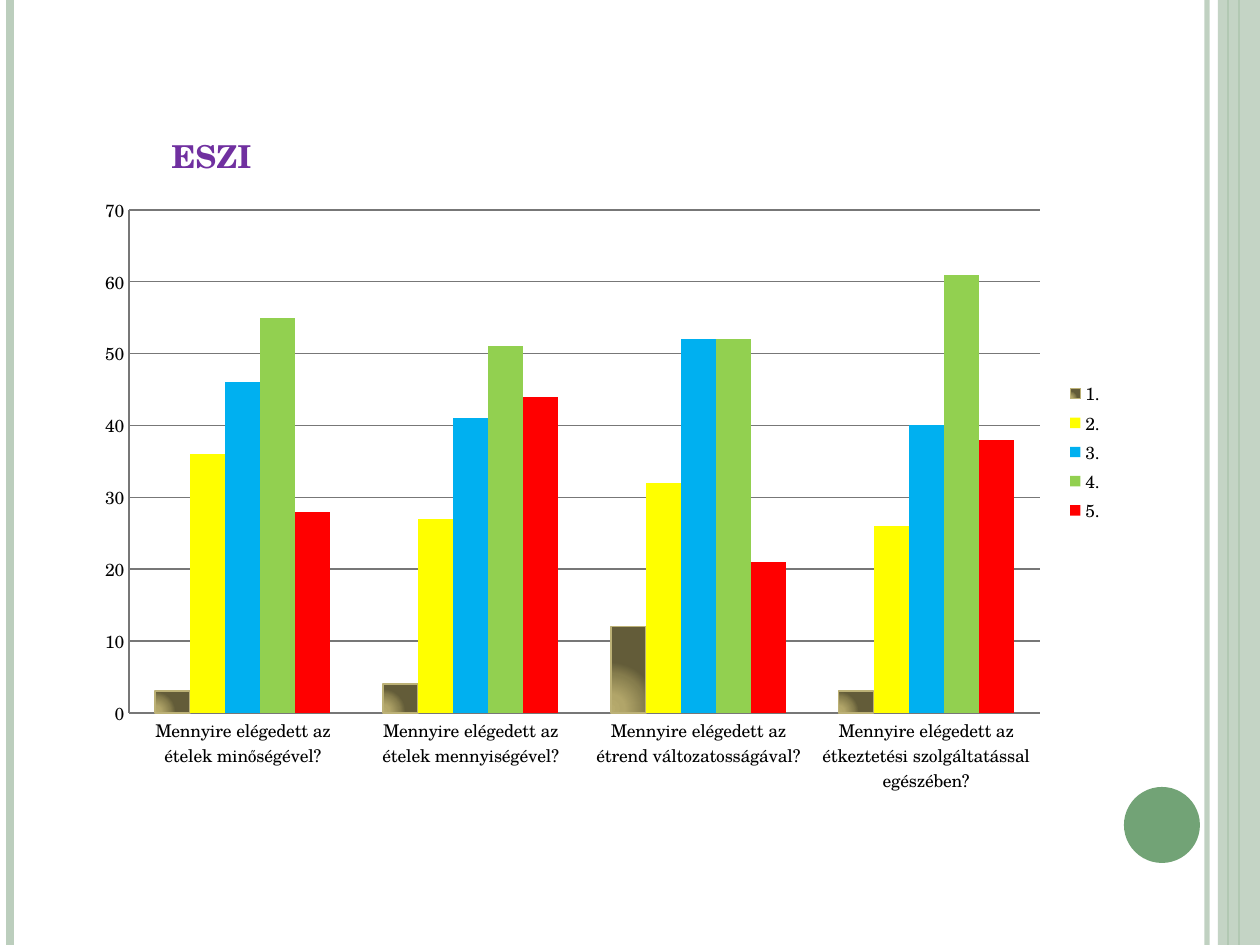
from lxml.etree import SubElement
from pptx import Presentation
from pptx.chart.data import CategoryChartData
from pptx.dml.color import RGBColor
from pptx.enum.chart import XL_CHART_TYPE, XL_LEGEND_POSITION, XL_TICK_MARK
from pptx.enum.shapes import MSO_CONNECTOR, MSO_SHAPE
from pptx.oxml import parse_xml
from pptx.oxml.ns import nsdecls, qn
from pptx.util import Pt

PX = 914400 // 126
W, H = 1260, 945
FONT = "TeX Gyre Schola"


def paint(fill, color, alpha=100):
    """Fill with a hex colour; alpha is the opacity in percent."""
    fill.solid()
    fill.fore_color.rgb = RGBColor.from_string(color)
    if alpha < 100:
        for clr in fill._xPr.iter(qn("a:srgbClr")):
            SubElement(clr, qn("a:alpha"), val=str(alpha * 1000))


def write(tf, text, size=10, color="000000", bold=False):
    r = tf.paragraphs[0].add_run()
    r.text = text
    r.font.name = FONT
    r.font.size = Pt(size)
    r.font.bold = bold
    paint(r.font.fill, color)


prs = Presentation()
prs.slide_width, prs.slide_height = 9144000, 6858000
s = prs.slides.add_slide(prs.slide_layouts[6])

# Side stripes, band and circle: x, width in points, colour, opacity
for x, width, color, alpha in [
    (1207, 3, "BCCEBD", 93),
    (10, 4.5, "BCCEBD", 100),
    (1239, 1.5, "72A376", 100),
    (1228, 0.75, "72A376", 100),
]:
    line = s.shapes.add_connector(MSO_CONNECTOR.STRAIGHT, x * PX, 0, x * PX, H * PX)
    line.line.width = Pt(width)
    paint(line.line.fill, color, alpha)
    SubElement(line._element.spPr, qn("a:effectLst"))

for kind, x, y, w, h, color, alpha in [
    (MSO_SHAPE.RECTANGLE, 1218, 0, 42, H, "BCCEBD", 87),
    (MSO_SHAPE.OVAL, 1124, 787, 76, 76, "72A376", 100),
]:
    sp = s.shapes.add_shape(kind, x * PX, y * PX, w * PX, h * PX)
    sp.shadow.inherit = False
    sp.line.fill.background()
    paint(sp.fill, color, alpha)

# Satisfaction chart
data = CategoryChartData()
data.categories = [
    "Mennyire elégedett az ételek minőségével?",
    "Mennyire elégedett az ételek mennyiségével?",
    "Mennyire elégedett az étrend változatosságával?",
    "Mennyire elégedett az étkeztetési szolgáltatással egészében?",
]
data.add_series("1.", (3, 4, 12, 3))
data.add_series("2.", (36, 27, 32, 26))
data.add_series("3.", (46, 41, 52, 40))
data.add_series("4.", (55, 51, 52, 61))
data.add_series("5.", (28, 44, 21, 38))

CX, CY, CW, CH = 84, 96, 1028, 712
chart = s.shapes.add_chart(
    XL_CHART_TYPE.COLUMN_CLUSTERED, CX * PX, CY * PX, CW * PX, CH * PX, data
).chart
chart.font.name = FONT
chart.font.size = Pt(10)
paint(chart.font.fill, "000000")
chart.has_title = True
write(chart.chart_title.text_frame, "ESZI", size=18, color="7030A0", bold=True)
chart.has_legend = True
chart.legend.position = XL_LEGEND_POSITION.RIGHT
chart.legend.include_in_layout = False

plot = chart.plots[0]
plot.gap_width = 150
plot.overlap = 0
plot.vary_by_categories = False

value_axis = chart.value_axis
value_axis.minimum_scale, value_axis.maximum_scale = 0, 70
value_axis.major_unit = 10
value_axis.has_major_gridlines = True
for axis in (chart.category_axis, value_axis):
    axis.major_tick_mark = axis.minor_tick_mark = XL_TICK_MARK.NONE
for part in (chart.category_axis, value_axis, value_axis.major_gridlines):
    part.format.line.width = Pt(0.75)
    paint(part.format.line.fill, "777777")

first, *others = plot.series
for series, color in zip(others, ["FFFF00", "00B0F0", "92D050", "FF0000"]):
    paint(series.format.fill, color)

first.format.line.width = Pt(1)
paint(first.format.line.fill, "BCB176")
stops = [(0, "B7AB6D"), (30, "B1A569"), (75, "867D4D"), (100, "635C39")]
stop_xml = "".join(
    f'<a:gs pos="{pos * 1000}"><a:srgbClr val="{color}"/></a:gs>' for pos, color in stops
)
first._element.get_or_add_spPr().insert(0, parse_xml(
    f'<a:gradFill {nsdecls("a")} rotWithShape="1"><a:gsLst>{stop_xml}</a:gsLst>'
    '<a:path path="circle"><a:fillToRect l="5000" t="100000" r="120000" b="10000"/>'
    "</a:path></a:gradFill>"
))

# Place title, plot and legend inside the chart: child index, x, y, then size
for tag, index, x, y, size in [
    ("c:title", 1, 166, 122, None),
    ("c:plotArea", 0, 129, 210, (911, 503)),
    ("c:legend", 1, 1060, 377, (50, 150)),
]:
    part = next(chart._chartSpace.iter(qn(tag)))
    for old in part.findall(qn("c:layout")):
        part.remove(old)
    layout = parse_xml(f'<c:layout {nsdecls("c")}/>')
    part.insert(index, layout)
    manual = SubElement(layout, qn("c:manualLayout"))
    if tag == "c:plotArea":
        SubElement(manual, qn("c:layoutTarget"), val="inner")
    for mode in ("xMode", "yMode"):
        SubElement(manual, qn(f"c:{mode}"), val="edge")
    values = [("x", (x - CX) / CW), ("y", (y - CY) / CH)]
    if size:
        values += [("w", size[0] / CW), ("h", size[1] / CH)]
    for name, value in values:
        SubElement(manual, qn(f"c:{name}"), val=f"{value:.4f}")

prs.save("out.pptx")
